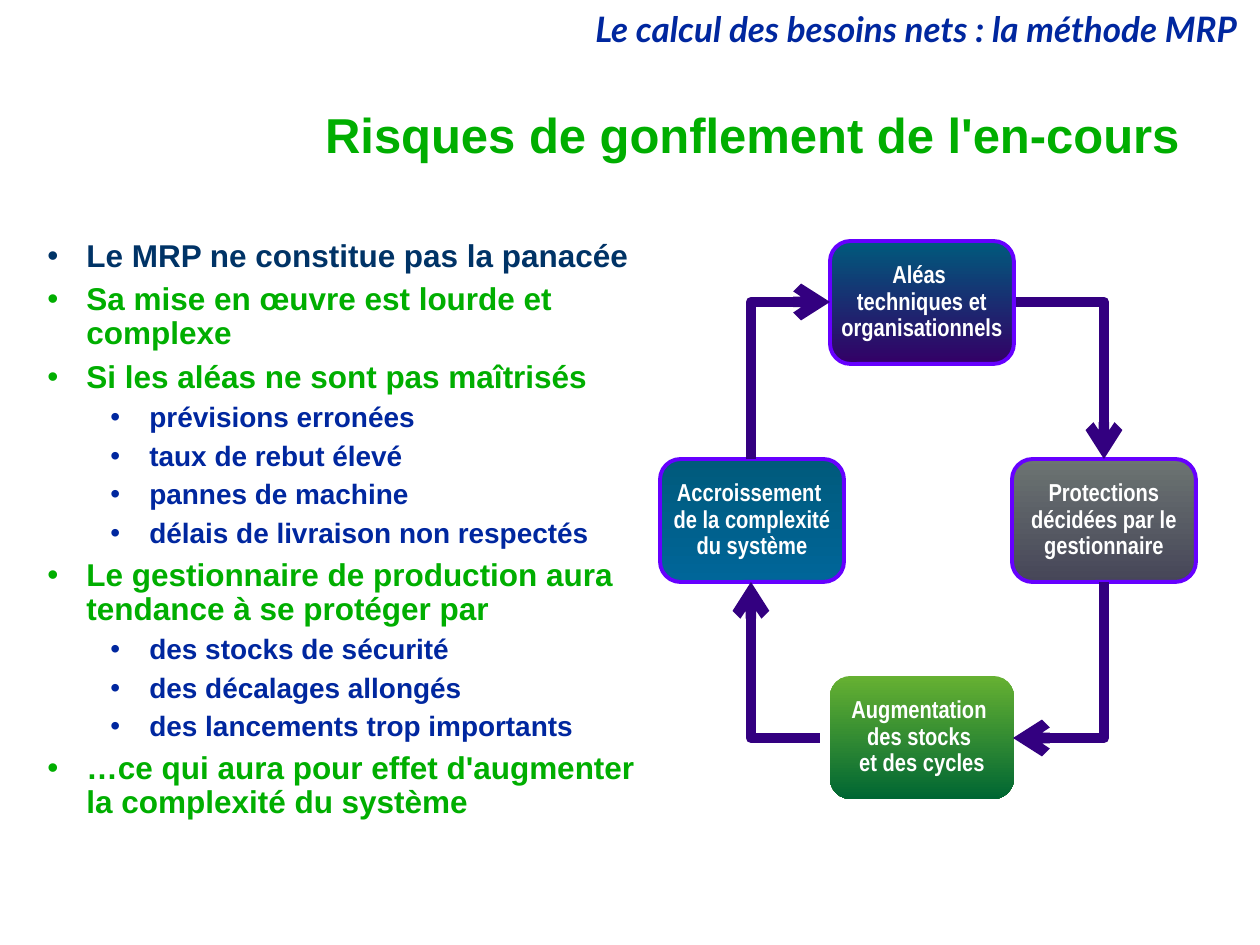
from lxml import etree
from pptx import Presentation
from pptx.dml.color import RGBColor
from pptx.enum.shapes import MSO_CONNECTOR, MSO_SHAPE
from pptx.enum.text import MSO_ANCHOR, PP_ALIGN
from pptx.oxml.ns import qn
from pptx.util import Pt

PX = 914400 // 126
LEFT, CENTER, RIGHT = PP_ALIGN.LEFT, PP_ALIGN.CENTER, PP_ALIGN.RIGHT
MIDDLE = MSO_ANCHOR.MIDDLE
ROUNDED = MSO_SHAPE.FLOWCHART_ALTERNATE_PROCESS
ELBOW = MSO_CONNECTOR.ELBOW
GREEN, BLUE, NAVY = "00AE00", "00279F", "003366"


def rgb(value):
    return RGBColor.from_string(value)


def add_text(tf, text, size, color, font="Arial", align=LEFT, italic=False,
             before=0, level=None):
    """Add a bold paragraph; before is a percentage, level makes it a bullet."""
    p = tf.paragraphs[0] if not tf.paragraphs[0].runs else tf.add_paragraph()
    p.alignment, p.line_spacing = align, 0.9
    pPr = p._p.get_or_add_pPr()
    if before:
        spacing = etree.SubElement(pPr, qn("a:spcBef"))
        etree.SubElement(spacing, qn("a:spcPct")).set("val", str(before * 1000))
    if level is not None:
        p.level = level
        pPr.set("marL", str((39 + 63 * level) * PX))
        pPr.set("indent", str(-39 * PX))
        etree.SubElement(pPr, qn("a:buFont")).set("typeface", "Arial")
        etree.SubElement(pPr, qn("a:buChar")).set("char", "•")
    r = p.add_run()
    r.text = text
    r.font.size, r.font.name = Pt(size), font
    r.font.bold, r.font.italic = True, italic
    r.font.color.rgb = rgb(color)


prs = Presentation()
prs.slide_width, prs.slide_height = 1260 * PX, 945 * PX
s = prs.slides.add_slide(prs.slide_layouts[6])

# Header, title and body frames
frames = []
for box in [(0, 6, 1250, 50), (194, 106, 998, 63), (35, 234, 615, 655)]:
    tf = s.shapes.add_textbox(*(v * PX for v in box)).text_frame
    tf.word_wrap = True
    frames.append(tf)
header, title, body = frames
title.vertical_anchor = MIDDLE
add_text(header, "Le calcul des besoins nets : la méthode MRP", 20, BLUE,
         font="Lato", align=RIGHT, italic=True, before=50)
add_text(title, "Risques de gonflement de l'en-cours", 28, GREEN, align=RIGHT)

# Bulleted list
bullets = [
    (0, "Le MRP ne constitue pas la panacée", NAVY),
    (0, "Sa mise en œuvre est lourde et complexe", GREEN),
    (0, "Si les aléas ne sont pas maîtrisés", GREEN),
    (1, "prévisions erronées", BLUE),
    (1, "taux de rebut élevé", BLUE),
    (1, "pannes de machine", BLUE),
    (1, "délais de livraison non respectés", BLUE),
    (0, "Le gestionnaire de production aura tendance à se protéger par", GREEN),
    (1, "des stocks de sécurité", BLUE),
    (1, "des décalages allongés", BLUE),
    (1, "des lancements trop importants", BLUE),
    (0, "…ce qui aura pour effet d'augmenter la complexité du système", GREEN),
]
for level, text, color in bullets:
    add_text(body, text, 18 - 2 * level, color, before=30, level=level)

# Cycle boxes
boxes = [
    (830, 241, "005A7C", "330066", "6600FF",
     ["Aléas ", "techniques et", "organisationnels"]),
    (1012, 459, "6C7472", "464658", "6600FF",
     ["Protections décidées par le gestionnaire"]),
    (830, 676, "66B132", "006633", None,
     ["Augmentation ", "des stocks ", "et des cycles"]),
    (660, 459, "005A7C", "006699", "6600FF",
     ["Accroissement ", "de la complexité du système"]),
]
for x, y, top, bottom, outline, lines in boxes:
    sp = s.shapes.add_shape(ROUNDED, x * PX, y * PX, 184 * PX, 123 * PX)
    sp.shadow.inherit = False
    sp.fill.gradient()
    sp.fill.gradient_angle = 270
    for stop, color in zip(sp.fill.gradient_stops, (top, bottom)):
        stop.color.rgb = rgb(color)
    if outline:
        sp.line.color.rgb = rgb(outline)
        sp.line.width = Pt(2.25)
    else:
        sp.line.fill.background()
    tf = sp.text_frame
    tf.word_wrap, tf.vertical_anchor = True, MIDDLE
    tf.margin_left = tf.margin_right = tf.margin_top = tf.margin_bottom = 0
    for line in lines:
        add_text(tf, line, 14, "FFFFFF", font="Arial Narrow", align=CENTER)

# Elbow arrows: start, end, and whether the first leg is vertical
arrows = [
    (1016, 302, 1104, 459, False),
    (1104, 582, 1013, 738, True),
    (820, 738, 751, 582, False),
    (751, 459, 830, 302, True),
]
for x1, y1, x2, y2, vertical in arrows:
    ends = [v * PX for v in (x1, y1, x2, y2)]
    if vertical:  # turn the ends back a quarter about the centre
        cx, cy = (x1 + x2) * PX // 2, (y1 + y2) * PX // 2
        dx, dy = (x1 - x2) * PX // 2, (y1 - y2) * PX // 2
        ends = [cx + dy, cy - dx, cx - dy, cy + dx]
    cxn = s.shapes.add_connector(ELBOW, *ends)
    cxn.line.color.rgb = rgb("330080")
    cxn.line.width = Pt(6)
    spPr = cxn._element.spPr
    spPr.find(qn("a:prstGeom")).set("prst", "bentConnector2")
    if vertical:
        spPr.find(qn("a:xfrm")).set("rot", "5400000")
    ln = spPr.find(qn("a:ln"))
    etree.SubElement(ln, qn("a:round"))
    etree.SubElement(ln, qn("a:tailEnd")).set("type", "arrow")
    etree.SubElement(spPr, qn("a:effectLst"))

prs.save("out.pptx")
